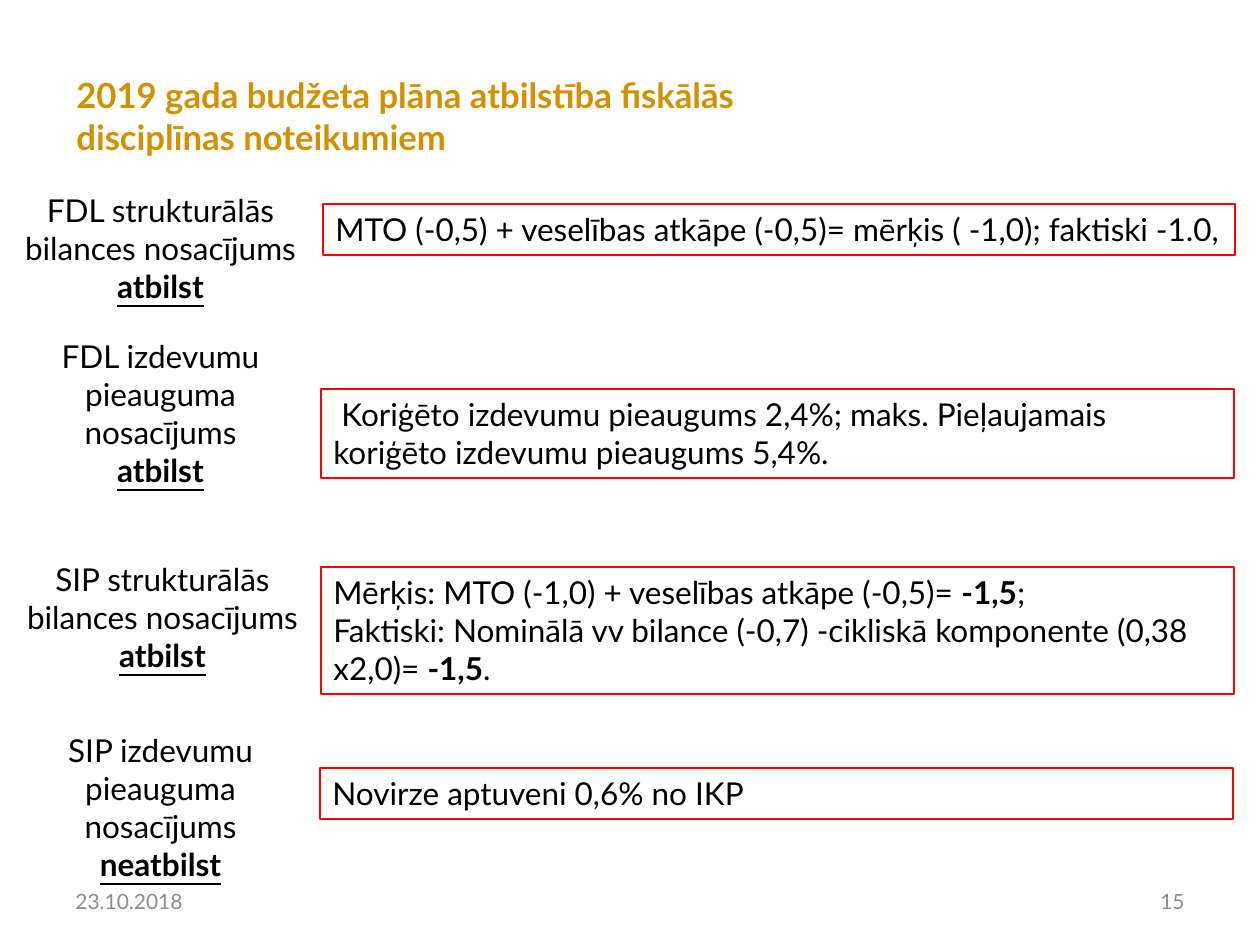
"""Build the slide on how the 2019 budget plan meets the fiscal rules."""
import pptx
import pptx.dml.color
import pptx.enum.shapes
import pptx.enum.text
import pptx.util

PX = pptx.util.Inches(1) / 126
FONT = "Lato"
BLACK = pptx.dml.color.RGBColor(0, 0, 0)
GOLD = pptx.dml.color.RGBColor(0xD3, 0x90, 0x01)
GREY = pptx.dml.color.RGBColor(0x8C, 0x8C, 0x8C)
RED = pptx.dml.color.RGBColor(0xFF, 0, 0)
ALIGN = pptx.enum.text.PP_ALIGN
ANCHOR = pptx.enum.text.MSO_ANCHOR

LABEL_WIDTH = 321
ONE_LINE, TWO_LINES, THREE_LINES, FOUR_LINES = 51, 89, 127, 165

ROWS = [
    ((0, 185, 1235, THREE_LINES), "FDL strukturālās bilances nosacījums", "atbilst",
     (323, 19, ONE_LINE),
     [[("MTO (-0,5) + veselības atkāpe (-0,5)= mērķis ( -1,0); faktiski -1.0,", False)]]),
    ((0, 331, 1234, FOUR_LINES), "FDL izdevumu pieauguma nosacījums", "atbilst",
     (321, 58, TWO_LINES),
     [[(" Koriģēto izdevumu pieaugums 2,4%; maks. Pieļaujamais koriģēto izdevumu "
        "pieaugums 5,4%.", False)]]),
    ((2, 554, 1232, THREE_LINES), "SIP strukturālās bilances nosacījums", "atbilst",
     (319, 13, THREE_LINES),
     [[("Mērķis: MTO (-1,0) + veselības atkāpe (-0,5)= ", False), ("-1,5", True), (";", False)],
      [("Faktiski: Nominālā vv bilance (-0,7) -cikliskā komponente (0,38", False)],
      [("x2,0)= ", False), ("-1,5", True), (".", False)]]),
    ((0, 725, 1233, FOUR_LINES), "SIP izdevumu pieauguma nosacījums", "neatbilst",
     (320, 43, ONE_LINE),
     [[("Novirze aptuveni 0,6% no IKP", False)]]),
]


def emu(box):
    """Turn a box in px into EMU."""
    return [round(length * PX) for length in box]


def add_run(paragraph, text, size=18, color=BLACK, bold=False, underline=False):
    """Add one formatted run to a paragraph."""
    run = paragraph.add_run()
    run.text = text
    run.font.name = FONT
    run.font.size = pptx.util.Pt(size)
    run.font.color.rgb = color
    run.font.bold = bold
    run.font.underline = underline


def prepare(frame, anchor, align):
    """Set wrapping, anchor and alignment, and return the first paragraph."""
    frame.word_wrap = True
    frame.vertical_anchor = anchor
    frame.paragraphs[0].alignment = align
    return frame.paragraphs[0]


def add_line_of_text(slide, box, text, size, color, align=ALIGN.LEFT, bold=False):
    """Place a vertically centred text of one style."""
    frame = slide.shapes.add_textbox(*emu(box)).text_frame
    add_run(prepare(frame, ANCHOR.MIDDLE, align), text, size, color, bold)


def add_rule_label(slide, box, rule, verdict):
    """Place the rule name with its underlined verdict."""
    frame = slide.shapes.add_textbox(*emu(box)).text_frame
    add_run(prepare(frame, ANCHOR.TOP, ALIGN.CENTER), rule)
    verdict_line = frame.add_paragraph()
    verdict_line.alignment = ALIGN.CENTER
    add_run(verdict_line, verdict, bold=True, underline=True)


def add_finding(slide, box, lines):
    """Place the red outlined box with the figures for a rule."""
    finding = slide.shapes.add_shape(pptx.enum.shapes.MSO_SHAPE.RECTANGLE, *emu(box))
    finding.shadow.inherit = False
    finding.fill.background()
    finding.line.color.rgb = RED
    finding.line.width = pptx.util.Pt(0.75)
    frame = finding.text_frame
    paragraph = prepare(frame, ANCHOR.TOP, ALIGN.LEFT)
    for index, line in enumerate(lines):
        if index:
            paragraph = frame.add_paragraph()
            paragraph.alignment = ALIGN.LEFT
        for text, bold in line:
            add_run(paragraph, text, bold=bold)


def add_rule_row(slide, box, rule, verdict, placement, lines):
    """Place one rule: its label at the left and its finding at the right."""
    left, top, width, height = box
    inset, drop, finding_height = placement
    add_rule_label(slide, (left, top, LABEL_WIDTH, height), rule, verdict)
    add_finding(slide, (left + inset, top + drop, width - inset, finding_height), lines)


def add_footer(slide, box, date, number):
    """Place the date and the slide number at the two ends of the footer."""
    left, top, width, height = box
    end_width = 294
    add_line_of_text(slide, (left, top, end_width, height), date, 12, GREY)
    add_line_of_text(slide, (left + width - end_width, top, end_width, height),
                     number, 12, GREY, ALIGN.RIGHT)


def main():
    """Build and save the slide."""
    deck = pptx.Presentation()
    deck.slide_width = pptx.util.Inches(10)
    deck.slide_height = pptx.util.Inches(7.5)
    slide = deck.slides.add_slide(deck.slide_layouts[6])
    add_footer(slide, (63, 876, 1134, 50), "23.10.2018", "15")
    add_line_of_text(slide, (64, 86, 784, 59),
                     "2019 gada budžeta plāna atbilstība fiskālās disciplīnas noteikumiem",
                     19.8, GOLD, bold=True)
    for row in ROWS:
        add_rule_row(slide, *row)
    deck.save("out.pptx")


if __name__ == "__main__":
    main()
